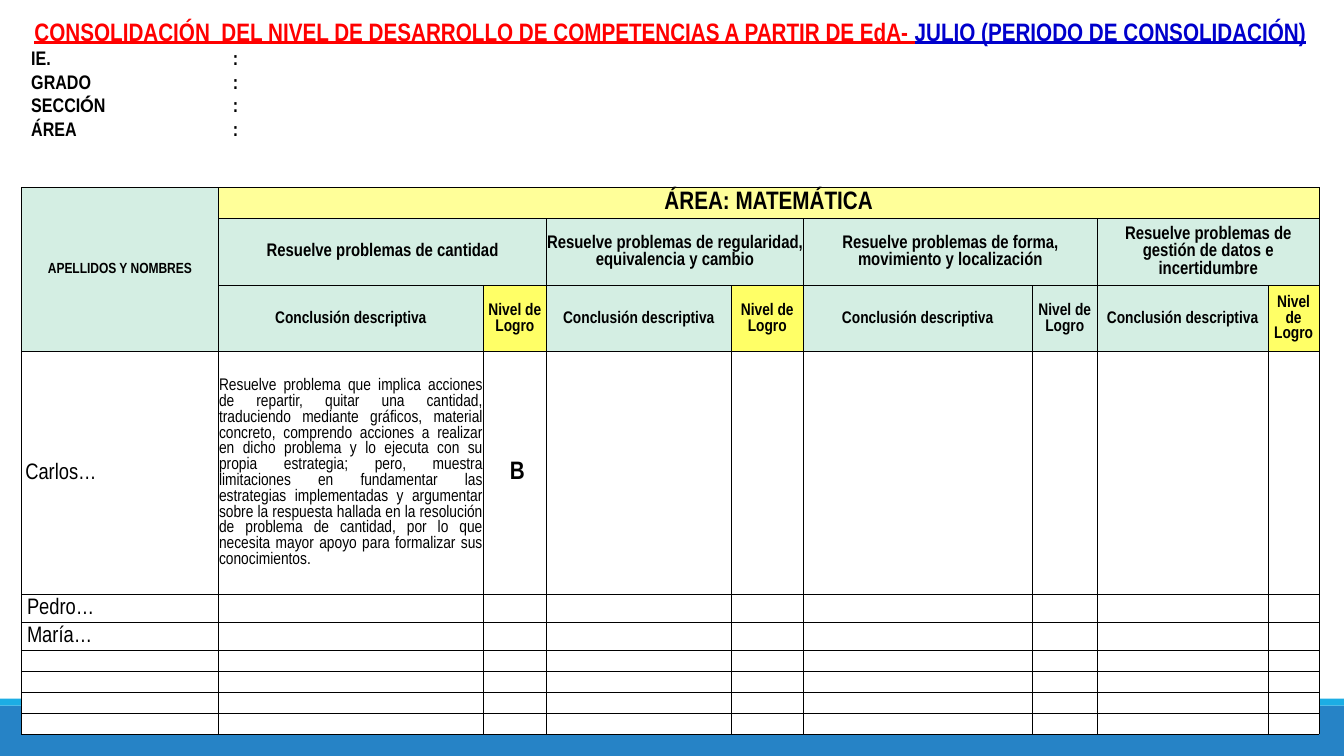
from lxml import etree
from pptx import Presentation
from pptx.dml.color import RGBColor
from pptx.enum.shapes import MSO_SHAPE
from pptx.enum.text import MSO_ANCHOR, MSO_AUTO_SIZE, PP_ALIGN
from pptx.oxml.ns import qn
from pptx.util import Pt

RECTANGLE = MSO_SHAPE.RECTANGLE
MIDDLE = MSO_ANCHOR.MIDDLE
GROW = MSO_AUTO_SIZE.SHAPE_TO_FIT_TEXT
LEFT, CENTER, JUSTIFY = PP_ALIGN.LEFT, PP_ALIGN.CENTER, PP_ALIGN.JUSTIFY

BLACK = RGBColor(0x00, 0x00, 0x00)
WHITE = RGBColor(0xFF, 0xFF, 0xFF)
RED = RGBColor(0xFF, 0x00, 0x00)
NAVY = RGBColor(0x00, 0x00, 0xCC)
BLUE = RGBColor(0x26, 0x83, 0xC6)
CYAN = RGBColor(0x1C, 0xAD, 0xE4)
MINT = RGBColor(0xD4, 0xEE, 0xE3)
PALE_YELLOW = RGBColor(0xFF, 0xFF, 0x99)
YELLOW = RGBColor(0xFF, 0xFF, 0x66)

NARROW = "Arial Narrow"
COLUMN_WIDTHS = [140.7, 189.3, 45, 132.1, 51.4, 163.6, 46.4, 122.1, 36.4]
ROW_HEIGHTS = [22.1, 47.9, 47.1, 173.6, 20, 19.3, 15, 15, 15, 15]
COMPETENCIES = [
    ("Resuelve problemas de cantidad", YELLOW),
    ("Resuelve problemas de regularidad, equivalencia y cambio", YELLOW),
    ("Resuelve problemas de forma, movimiento y localización", MINT),
    ("Resuelve problemas de gestión de datos e incertidumbre", YELLOW),
]
STUDENTS = [("Carlos…", 2.8), ("Pedro…", 4), ("María…", 4)]
CONCLUSION = (
    "Resuelve problema que implica acciones de repartir, quitar una cantidad, "
    "traduciendo mediante gráficos, material concreto, comprendo acciones a realizar "
    "en dicho problema y lo ejecuta con su propia estrategia; pero, muestra limitaciones "
    "en fundamentar las estrategias implementadas y argumentar sobre la respuesta hallada "
    "en la resolución de problema de cantidad, por lo que necesita mayor apoyo para "
    "formalizar sus conocimientos."
)


def write(paragraph, text, size=14, bold=True, color=BLACK, font=NARROW,
          underline=False, align=LEFT):
    """Append formatted text to a paragraph."""
    paragraph.alignment = align
    paragraph.line_spacing = 1.0
    run = paragraph.add_run()
    run.text = text
    run.font.size = Pt(size)
    run.font.bold = bold
    run.font.underline = underline
    run.font.name = font
    run.font.color.rgb = color


def add_band(slide, top, height, color):
    """Draw a full-width footer band."""
    band = slide.shapes.add_shape(RECTANGLE, 0, Pt(top), Pt(960), Pt(height))
    band.shadow.inherit = False
    band.fill.solid()
    band.fill.fore_color.rgb = color
    band.line.fill.background()


def set_tab_stops(paragraph, *positions):
    """Set left tab stops on a paragraph."""
    stops = etree.SubElement(paragraph._p.get_or_add_pPr(), qn("a:tabLst"))
    for position in positions:
        etree.SubElement(stops, qn("a:tab"), pos=str(Pt(position)), algn="l")


def fill_heading(heading):
    """Place the title and write its form fields."""
    heading.left, heading.top = Pt(15.1), Pt(7.2)
    heading.width, heading.height = Pt(927.4), Pt(97.2)
    heading.fill.solid()
    heading.fill.fore_color.rgb = WHITE
    frame = heading.text_frame
    frame.word_wrap = True
    frame.auto_size = GROW
    frame.vertical_anchor = MIDDLE
    title = frame.paragraphs[0]
    write(title, "CONSOLIDACIÓN  DEL NIVEL DE DESARROLLO DE COMPETENCIAS A PARTIR DE EdA- ",
          size=18, color=RED, underline=True, align=CENTER)
    write(title, "JULIO (PERIODO DE CONSOLIDACIÓN)",
          size=18, color=NAVY, underline=True, align=CENTER)
    for field in ("IE.", "GRADO", "SECCIÓN", "ÁREA"):
        line = frame.add_paragraph()
        before, accent, after = field.partition("Ó")
        if accent:
            write(line, before)
            write(line, accent, font="Calibri")
            write(line, f"{after}\t\t:")
        else:
            write(line, f"{field}\t\t:")
        set_tab_stops(line, 72, 144)


def style_cell(cell, color=WHITE):
    """Give a cell its fill, margins and thin black borders."""
    cell.vertical_anchor = MIDDLE
    cell.margin_left = cell.margin_right = cell.margin_top = Pt(0.5)
    cell.margin_bottom = 0
    cell.fill.solid()
    cell.fill.fore_color.rgb = color
    properties = cell._tc.get_or_add_tcPr()
    for index, side in enumerate(("lnL", "lnR", "lnT", "lnB")):
        border = etree.Element(qn(f"a:{side}"), w=str(Pt(0.5)))
        ink = etree.SubElement(border, qn("a:solidFill"))
        etree.SubElement(ink, qn("a:srgbClr"), val=str(BLACK))
        properties.insert(index, border)
    etree.SubElement(cell.text_frame.paragraphs[0]._p, qn("a:endParaRPr"), sz="1000")


def write_cell(cell, text, size, color=WHITE, align=CENTER, bold=True, indent=0.5):
    """Write text in a styled cell."""
    cell.fill.fore_color.rgb = color
    cell.margin_left = Pt(indent)
    write(cell.text_frame.paragraphs[0], text, size=size, bold=bold, align=align)


def add_grid(slide):
    """Add the empty bordered table and return it."""
    grid = slide.shapes.add_table(len(ROW_HEIGHTS), len(COLUMN_WIDTHS), Pt(15.3), Pt(133.9),
                                  Pt(sum(COLUMN_WIDTHS)), Pt(sum(ROW_HEIGHTS))).table
    grid.first_row = grid.horz_banding = False
    for column, width in zip(grid.columns, COLUMN_WIDTHS):
        column.width = Pt(width)
    for row, height in zip(grid.rows, ROW_HEIGHTS):
        row.height = Pt(height)
    for cell in grid.iter_cells():
        style_cell(cell)
    return grid


def fill_headers(grid):
    """Merge and write the three header rows."""
    grid.cell(0, 0).merge(grid.cell(2, 0))
    grid.cell(0, 1).merge(grid.cell(0, 8))
    write_cell(grid.cell(0, 0), "APELLIDOS Y NOMBRES", 10.5, MINT)
    write_cell(grid.cell(0, 1), "ÁREA: MATEMÁTICA", 18, PALE_YELLOW)
    for index, (competency, level_color) in enumerate(COMPETENCIES):
        column = 1 + 2 * index
        grid.cell(1, column).merge(grid.cell(1, column + 1))
        write_cell(grid.cell(1, column), competency, 13, MINT)
        write_cell(grid.cell(2, column), "Conclusión descriptiva", 12, MINT)
        write_cell(grid.cell(2, column + 1), "Nivel de Logro", 12, level_color)


def fill_students(grid):
    """Write the student names and the first assessment."""
    for row, (student, indent) in enumerate(STUDENTS, start=3):
        write_cell(grid.cell(row, 0), student, 16, align=JUSTIFY, bold=False, indent=indent)
    write_cell(grid.cell(3, 1), CONCLUSION, 12, align=JUSTIFY, bold=False)
    write_cell(grid.cell(3, 2), "B", 18, indent=4)


def main():
    """Build and save the slide."""
    deck = Presentation()
    deck.slide_width, deck.slide_height = Pt(960), Pt(540)
    slide = deck.slides.add_slide(deck.slide_layouts[5])
    add_band(slide, 504, 36, BLUE)
    add_band(slide, 499, 5, CYAN)
    grid = add_grid(slide)
    fill_headers(grid)
    fill_students(grid)
    fill_heading(slide.shapes.title)
    deck.save("out.pptx")


if __name__ == "__main__":
    main()
